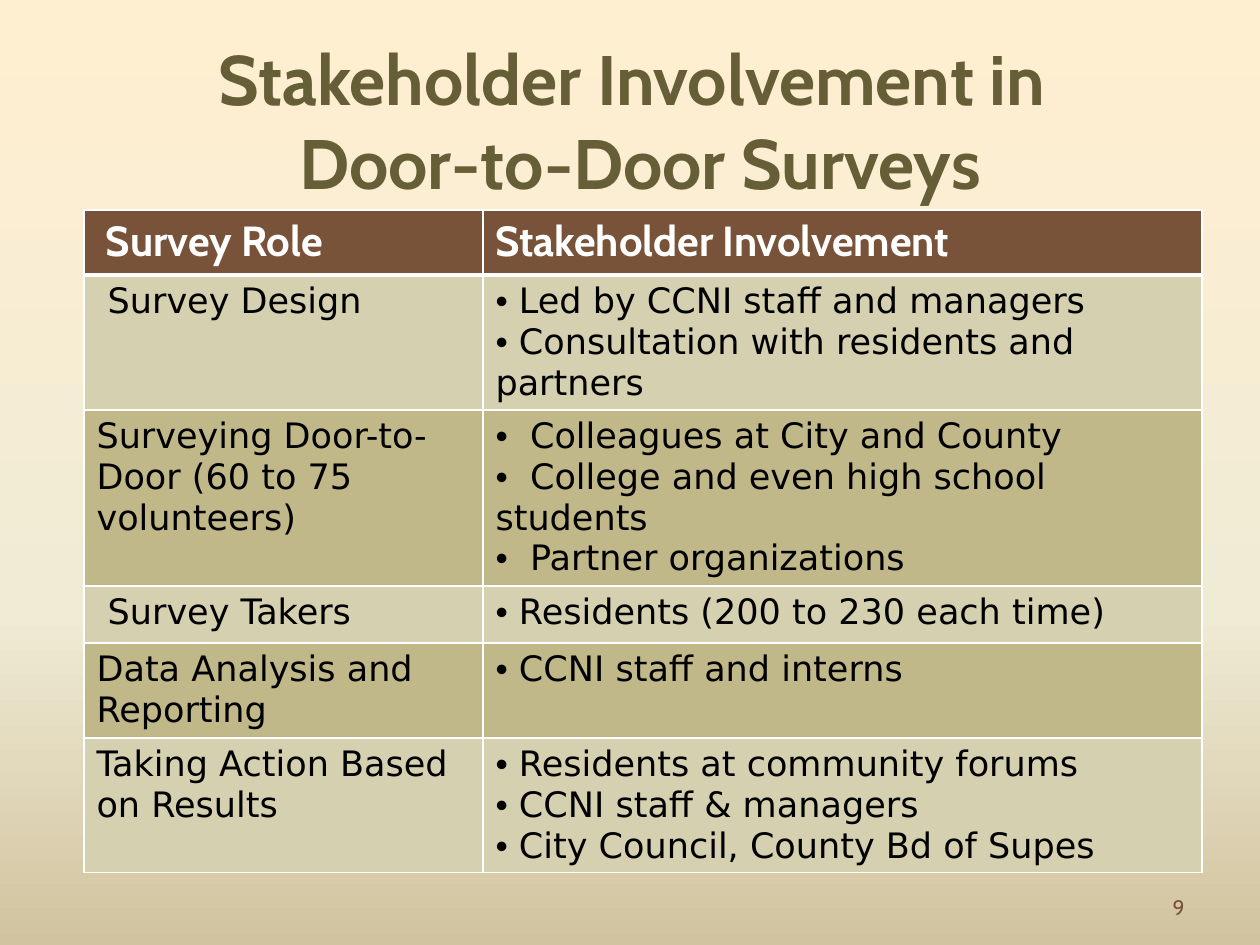
from copy import deepcopy
from lxml.etree import SubElement
from pptx import Presentation
from pptx.dml.color import RGBColor
from pptx.enum.text import MSO_ANCHOR, MSO_AUTO_SIZE, PP_ALIGN
from pptx.oxml.ns import qn
from pptx.util import Pt

PX = 914400 / 126
OLIVE = RGBColor(0x65, 0x5E, 0x36)
BROWN = RGBColor(0x79, 0x53, 0x39)
WHITE = RGBColor(0xFF, 0xFF, 0xFF)
BLACK = RGBColor(0, 0, 0)
BANDS = (RGBColor(0xD5, 0xD0, 0xB0), RGBColor(0xC0, 0xB8, 0x88))
BACKGROUND = (
    (0, RGBColor(0xFF, 0xEF, 0xD1)),
    (0.65, RGBColor(0xF0, 0xEB, 0xD5)),
    (1, RGBColor(0xD1, 0xC3, 0x9F)),
)
HEADER = (" Survey Role", "Stakeholder Involvement")
ROLES = (
    (" Survey Design", (" Led by CCNI staff and managers",
                        " Consultation with residents and partners")),
    ("Surveying Door-to-Door (60 to 75 volunteers)",
     ("  Colleagues at City and County",
      "  College and even high school students",
      "  Partner organizations")),
    (" Survey Takers", (" Residents (200 to 230 each time)",)),
    ("Data Analysis and Reporting", (" CCNI staff and interns",)),
    ("Taking Action Based on Results", (" Residents at community forums",
                                        " CCNI staff & managers",
                                        " City Council, County Bd of Supes")),
)


def px(n):
    return round(n * PX)


class Deck:
    heading_font = "Cabin"
    body_font = "DejaVu Sans"

    def __init__(self, width, height):
        self.prs = Presentation()
        self.prs.slide_width, self.prs.slide_height = px(width), px(height)
        self.s = self.prs.slides.add_slide(self.prs.slide_layouts[5])

    def background(self, stops):
        fill = self.s.background.fill
        fill.gradient()
        fill.gradient_angle = 270
        gs_list = self.s._element.find(".//" + qn("a:gsLst"))
        gs_list.append(deepcopy(gs_list[-1]))
        for stop, (position, color) in zip(fill.gradient_stops, stops):
            stop.position = position
            stop.color.rgb = color

    def style(self, p, size, font, color, bold=False, align=PP_ALIGN.LEFT):
        p.alignment = align
        p.font.size, p.font.name, p.font.bold = Pt(size), font, bold
        p.font.color.rgb = color

    def title(self, text, x, y, w, h):
        sp = self.s.shapes.title
        sp.left, sp.top, sp.width, sp.height = map(px, (x, y, w, h))
        tf = sp.text_frame
        tf.text = text
        tf.auto_size = MSO_AUTO_SIZE.NONE
        tf.vertical_anchor = MSO_ANCHOR.BOTTOM
        self.style(tf.paragraphs[0], 40, self.heading_font, OLIVE, True, PP_ALIGN.CENTER)

    def page_number(self, text, x, y, w, h):
        tf = self.s.shapes.add_textbox(*map(px, (x, y, w, h))).text_frame
        tf.word_wrap = True
        tf.vertical_anchor = MSO_ANCHOR.BOTTOM
        tf.text = text
        self.style(tf.paragraphs[0], 12, self.heading_font, BROWN, align=PP_ALIGN.RIGHT)

    def borders(self, cell, **widths):
        tc_pr = cell._tc.get_or_add_tcPr()
        for side in "LRTB":
            ln = SubElement(tc_pr, qn("a:ln" + side), w=str(Pt(widths.get(side, 1))))
            fill = SubElement(ln, qn("a:solidFill"))
            SubElement(fill, qn("a:srgbClr"), val=str(WHITE))

    def bullet(self, p):
        p_pr = p._p.get_or_add_pPr()
        p_pr.set("marL", "0")
        p_pr.set("indent", "0")
        SubElement(p_pr, qn("a:buFont"), typeface="Arial")
        SubElement(p_pr, qn("a:buChar"), char="•")

    def cell(self, cell, lines, fill, size, font, color, bold=False, bullets=False, **widths):
        self.borders(cell, **widths)
        cell.fill.solid()
        cell.fill.fore_color.rgb = fill
        tf = cell.text_frame
        tf.text = "\n".join(lines)
        for p in tf.paragraphs:
            if bullets:
                self.bullet(p)
            self.style(p, size, font, color, bold)

    def table(self, header, rows, x, y, widths, heights):
        frame = self.s.shapes.add_table(
            len(heights), len(widths), px(x), px(y), px(sum(widths)), px(sum(heights)))
        table = frame.table
        for column, width in zip(table.columns, widths):
            column.width = px(width)
        for row, height in zip(table.rows, heights):
            row.height = px(height)
        for c, text in enumerate(header):
            self.cell(table.cell(0, c), [text], BROWN, 24, self.heading_font, WHITE, True, B=3)
        for r, (role, involvement) in enumerate(rows, 1):
            top = 3 if r == 1 else 1
            for c, lines in enumerate(([role], involvement)):
                self.cell(table.cell(r, c), lines, BANDS[(r - 1) % 2], 20, self.body_font,
                          BLACK, bullets=c == 1, T=top)


def main():
    deck = Deck(1260, 945)
    deck.background(BACKGROUND)
    deck.title("Stakeholder Involvement in \vDoor-to-Door Surveys", 73, 53, 1134, 157)
    deck.table(HEADER, ROLES, 84, 210, (399, 719), (65, 135, 176, 57, 95, 134))
    deck.page_number("9", 903, 861, 294, 65)
    deck.prs.save("out.pptx")


if __name__ == "__main__":
    main()
